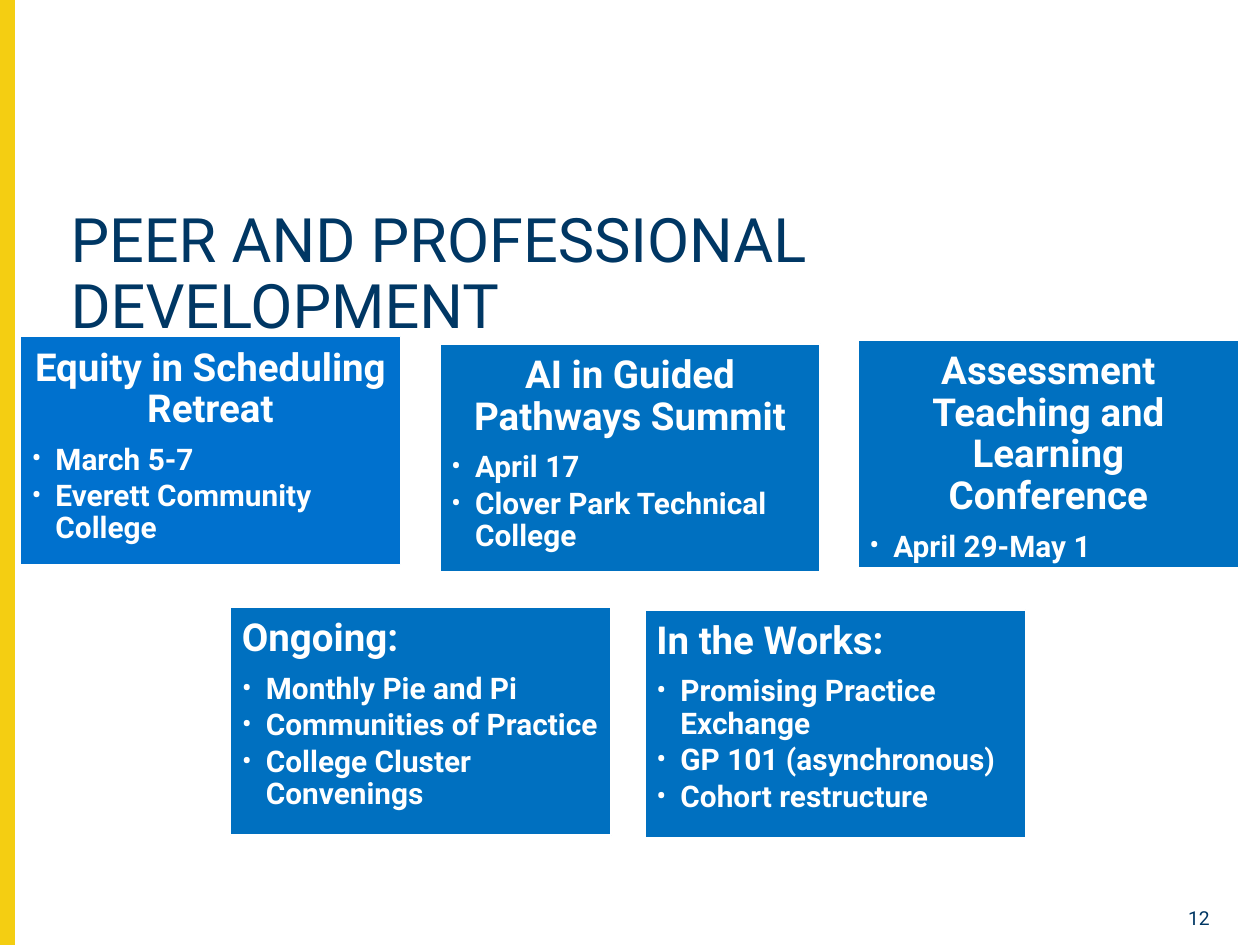
from lxml import etree
from pptx import Presentation
from pptx.dml.color import RGBColor
from pptx.enum.shapes import MSO_SHAPE as Shape
from pptx.enum.text import MSO_ANCHOR as Anchor, MSO_AUTO_SIZE as AutoSize, PP_ALIGN as Align
from pptx.oxml.ns import qn
from pptx.util import Inches, Pt

NAVY = RGBColor(0x00, 0x37, 0x64)
YELLOW = RGBColor(0xF4, 0xCE, 0x12)
BRIGHT_BLUE = RGBColor(0x00, 0x71, 0xCE)
BLUE = RGBColor(0x00, 0x70, 0xC0)
WHITE = RGBColor(0xFF, 0xFF, 0xFF)
FONT = "Roboto"

CARD_WIDTH, CARD_HEIGHT = 3.02, 1.81
# left, top, fill, heading alignment, heading, bullets
CARDS = [
    (0.16, 2.67, BRIGHT_BLUE, Align.CENTER, "Equity in Scheduling Retreat",
     ["March 5-7", "Everett Community College"]),
    (3.49, 2.73, BLUE, Align.CENTER, "AI in Guided Pathways Summit",
     ["April 17", "Clover Park Technical College"]),
    (6.81, 2.7, BLUE, Align.CENTER, "Assessment Teaching and Learning Conference",
     ["April 29-May 1"]),
    (1.83, 4.82, BLUE, Align.LEFT, "Ongoing:",
     ["Monthly Pie and Pi", "Communities of Practice", "College Cluster Convenings"]),
    (5.12, 4.84, BLUE, Align.LEFT, "In the Works:",
     ["Promising Practice Exchange", "GP 101 (asynchronous)", "Cohort restructure"]),
]


def set_values(target, values):
    for name, value in values.items():
        setattr(target, name, value)


def write(para, text, size, color, bold=False, **layout):
    set_values(para, layout)
    span = para.add_run()
    span.text = text
    set_values(span.font, {"name": FONT, "size": Pt(size), "bold": bold})
    span.font.color.rgb = color


def add_bullet(para):
    props = para._p.get_or_add_pPr()
    props.set("marL", str(Inches(0.19)))
    props.set("indent", str(-Inches(0.19)))
    etree.SubElement(props, qn("a:buFont")).set("typeface", FONT)
    etree.SubElement(props, qn("a:buChar")).set("char", "•")


def add_block(page, left, top, width, height, fill, line):
    block = page.shapes.add_shape(
        Shape.RECTANGLE, Inches(left), Inches(top), Inches(width), Inches(height))
    block.shadow.inherit = False
    block.fill.solid()
    block.fill.fore_color.rgb = fill
    block.line.color.rgb = line
    block.line.width = Pt(1)
    return block


def add_title(page, left, top, width, height):
    title = page.shapes.title
    set_values(title, {"left": Inches(left), "top": Inches(top),
                       "width": Inches(width), "height": Inches(height)})
    set_values(title.text_frame, {"word_wrap": True, "auto_size": AutoSize.NONE,
                                  "vertical_anchor": Anchor.TOP})
    write(title.text_frame.paragraphs[0], "PEER AND PROFESSIONAL DEVELOPMENT", 35, NAVY,
          alignment=Align.LEFT, line_spacing=0.9)


def add_page_number(page, left, top, width, height):
    box = page.shapes.add_textbox(Inches(left), Inches(top), Inches(width), Inches(height))
    box.text_frame.word_wrap = True
    write(box.text_frame.paragraphs[0], "12", 11, NAVY, alignment=Align.RIGHT)


def add_card(page, left, top, fill, alignment, heading, bullets):
    card = add_block(page, left, top, CARD_WIDTH, CARD_HEIGHT, fill, WHITE)
    frame = card.text_frame
    set_values(frame, {"word_wrap": True, "vertical_anchor": Anchor.TOP})
    set_values(frame, {f"margin_{side}": Inches(0.09)
                       for side in ("left", "top", "right", "bottom")})
    write(frame.paragraphs[0], heading, 22, WHITE, bold=True,
          alignment=alignment, line_spacing=0.9, space_after=Pt(7.7))
    for text in bullets:
        para = frame.add_paragraph()
        add_bullet(para)
        write(para, text, 17, WHITE, bold=True, level=1, alignment=Align.LEFT,
              line_spacing=0.9, space_after=Pt(2.5))


def main():
    deck = Presentation()
    deck.slide_width, deck.slide_height = Inches(10), Inches(7.5)
    page = deck.slides.add_slide(deck.slide_layouts[5])

    # Side stripe, title and page number
    add_block(page, 0, 0, 0.11, 7.5, YELLOW, YELLOW)
    add_title(page, 0.46, 1.61, 9.08, 0.86)
    add_page_number(page, 9.2, 7.14, 0.5, 0.21)

    # Event and programme cards
    for card in CARDS:
        add_card(page, *card)

    deck.save("out.pptx")


if __name__ == "__main__":
    main()
